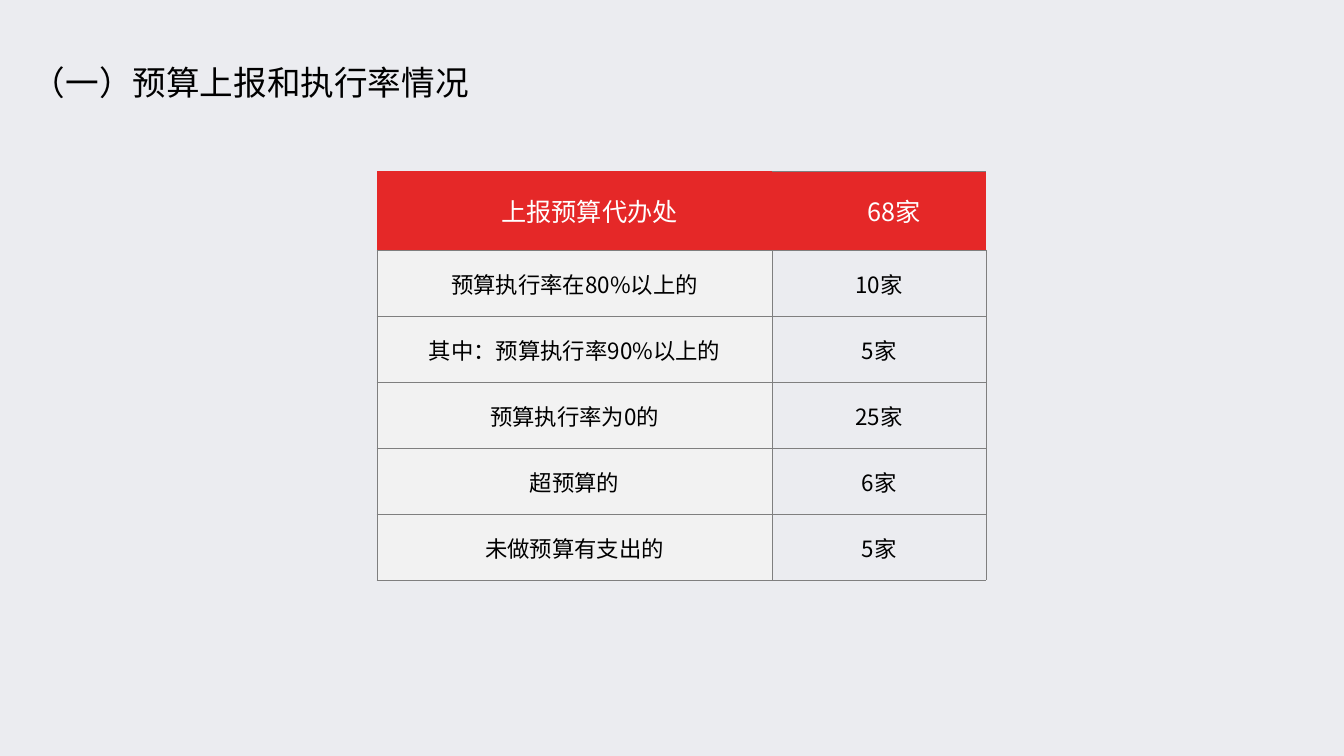
from dataclasses import dataclass

from lxml import etree
from pptx import Presentation
from pptx import util as u
from pptx.dml import color
from pptx.enum import shapes, text
from pptx.oxml import ns


@dataclass(frozen=True)
class Theme:
    font: str = "Noto Sans CJK SC"
    back: str = "EBECF0"
    ink: str = "000000"
    white: str = "FFFFFF"
    red: str = "E52828"
    pale: str = "F2F2F2"
    rule: str = "7F7F7F"
    line: float = 0.5
    title: int = 24
    head: int = 18
    body: int = 16


class Deck:
    """Draws styled elements on the current slide, with lengths in px."""

    def __init__(self, theme, wide, high):
        self.theme = theme
        self.prs = Presentation()
        self.prs.slide_width, self.prs.slide_height = self.px(wide, high)
        self.slide = self.prs.slides.add_slide(self.prs.slide_layouts[6])

    def px(self, *sizes):
        return [u.Emu(round(size * 914400 / 100.8)) for size in sizes]

    def paint(self, fill, tint):
        if tint:
            fill.solid()
            fill.fore_color.rgb = color.RGBColor.from_string(tint)
        else:
            fill.background()

    def label(self, para, words, size, tint, align):
        para.text = words
        para.alignment = align
        para.font.size = u.Pt(size)
        para.font.bold = False
        self.paint(para.font.fill, tint)
        para.font.name = self.theme.font
        props = para._p.pPr.find(ns.qn("a:defRPr"))
        etree.SubElement(props, ns.qn("a:ea"), typeface=self.theme.font)

    def panel(self, box, tint):
        shape = self.slide.shapes.add_shape(shapes.MSO_SHAPE.RECTANGLE, *self.px(*box))
        shape.shadow.inherit = False
        self.paint(shape.fill, tint)
        shape.line.fill.background()

    def title(self, box, words, indent):
        frame = self.slide.shapes.add_textbox(*self.px(*box)).text_frame
        frame.word_wrap = False
        frame.auto_size = text.MSO_AUTO_SIZE.SHAPE_TO_FIT_TEXT
        frame.vertical_anchor = text.MSO_ANCHOR.MIDDLE
        para = frame.paragraphs[0]
        self.label(para, words, self.theme.title, self.theme.ink, text.PP_ALIGN.LEFT)
        para._p.pPr.set("marL", "0")
        para._p.pPr.set("indent", str(self.px(indent)[0]))

    def edge(self, cell, sides):
        props = cell._tc.get_or_add_tcPr()
        for side in "LRTB":
            line = etree.SubElement(props, ns.qn(f"a:ln{side}"), w=str(u.Pt(self.theme.line)))
            if side in sides:
                fill = etree.SubElement(line, ns.qn("a:solidFill"))
                etree.SubElement(fill, ns.qn("a:srgbClr"), val=self.theme.rule)
            else:
                etree.SubElement(line, ns.qn("a:noFill"))

    def cell(self, cell, words, size, ink, tint, sides, pads):
        cell.margin_left, cell.margin_top, cell.margin_right, cell.margin_bottom = self.px(*pads)
        cell.vertical_anchor = text.MSO_ANCHOR.MIDDLE
        self.edge(cell, sides)
        self.paint(cell.fill, tint)
        self.label(cell.text_frame.paragraphs[0], words, size, ink, text.PP_ALIGN.CENTER)

    def table(self, left, top, cols, rows, data):
        theme = self.theme
        box = self.px(left, top, sum(cols), sum(rows))
        table = self.slide.shapes.add_table(len(rows), len(cols), *box).table
        table.first_row = table.horz_banding = False
        for col, wide in zip(table.columns, self.px(*cols)):
            col.width = wide
        for row, high in zip(table.rows, self.px(*rows)):
            row.height = high
        for r, line in enumerate(data):
            for c, words in enumerate(line):
                if r == 0:
                    look = theme.head, theme.white, theme.red, "TB" if c else "B", (30, 0, 0, 0)
                else:
                    look = theme.body, theme.ink, None if c else theme.pale, "LRTB", (1, 1, 1, 0)
                self.cell(table.cell(r, c), words, *look)


def main():
    data = [
        ("上报预算代办处", "68家"),
        ("预算执行率在80%以上的", "10家"),
        ("其中：预算执行率90%以上的", "5家"),
        ("预算执行率为0的", "25家"),
        ("超预算的", "6家"),
        ("未做预算有支出的", "5家"),
    ]
    deck = Deck(Theme(), 1344, 756)
    deck.panel((0, 0, 1344, 756), deck.theme.back)
    deck.table(377, 171, [395, 214], [79] + [66] * 5, data)
    deck.title((0, 57, 486, 50), "（一）预算上报和执行率情况", 22)
    deck.prs.save("out.pptx")


if __name__ == "__main__":
    main()
